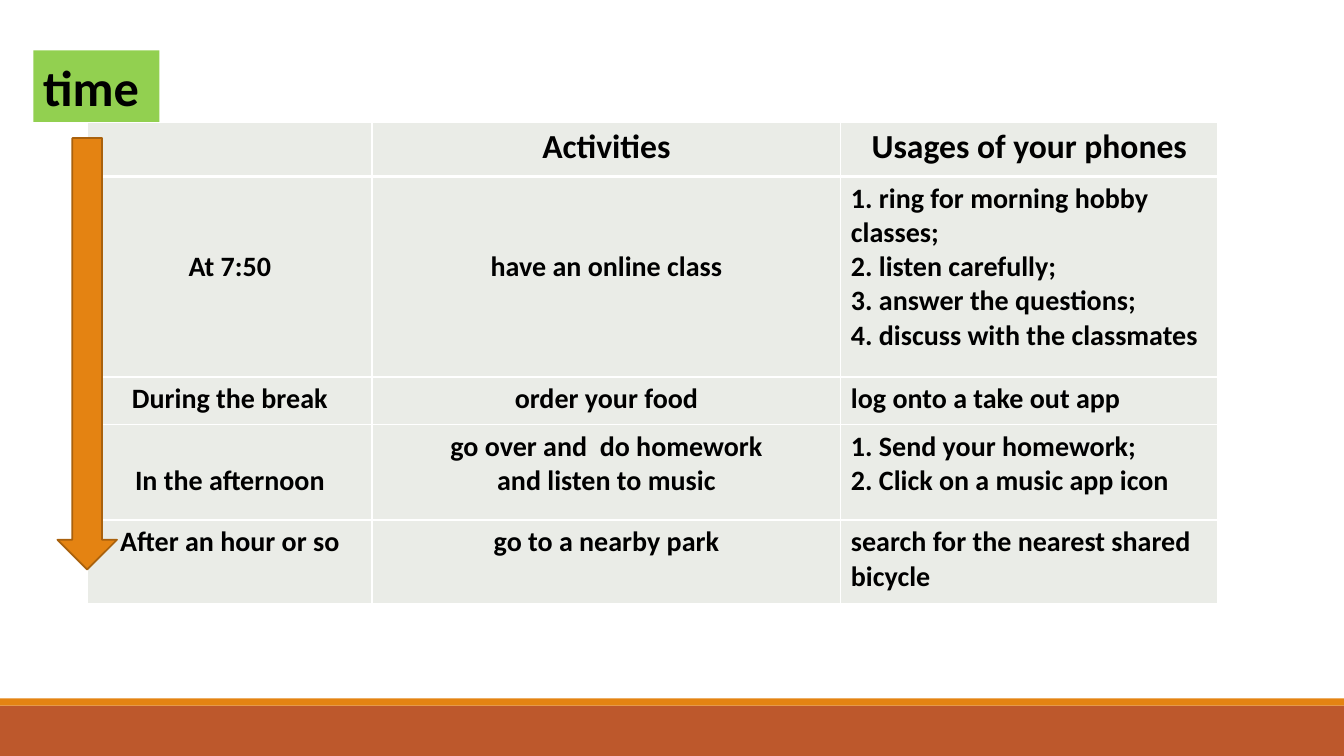
from lxml.etree import SubElement
from pptx import Presentation
from pptx.dml.color import RGBColor
from pptx.enum.shapes import MSO_SHAPE as Preset
from pptx.enum.text import PP_ALIGN as Align
from pptx.oxml.ns import qn
from pptx.util import Inches, Pt

COLORS = {
    "footer": "BD582C",
    "accent": "E48312",
    "arrow_edge": "A9610D",
    "label": "92D050",
    "cell": "EAECE7",
    "grid": "FFFFFF",
    "text": "000000",
}
WIDTH, HEIGHT = 13.33, 7.5
FOOTER_TOP, STRIPE = 7, 0.07
LINE = 0.34
MARGIN = 0.05
COLUMNS = [2.82, 4.65, 3.74]
ROWS = [0.54, 1.99, 0.47, 0.95, 0.83]
SCHEDULE = [
    ["", "Activities", "Usages of your phones"],
    ["At 7:50", "have an online class",
     "1. ring for morning hobby classes;\n2. listen carefully;\n"
     "3. answer the questions;\n4. discuss with the classmates"],
    ["During the break", "order your food", "log onto a take out app"],
    ["In the afternoon", "go over and  do homework\nand listen to music",
     "1. Send your homework;\n2. Click on a music app icon"],
    ["After an hour or so", "go to a nearby park",
     "search for the nearest shared bicycle"],
]
LINES_DOWN = {(1, 0): 2, (1, 1): 2, (3, 0): 1}

deck = Presentation()
deck.slide_width, deck.slide_height = Inches(WIDTH), Inches(HEIGHT)
slide = deck.slides.add_slide(deck.slide_layouts[6])


def add_block(preset, left, top, width, height, color):
    block = slide.shapes.add_shape(
        preset, Inches(left), Inches(top), Inches(width), Inches(height))
    block.shadow.inherit = False
    block.fill.solid()
    block.fill.fore_color.rgb = RGBColor.from_string(COLORS[color])
    block.line.fill.background()
    return block


def style_text(frame, size, align):
    for paragraph in frame.paragraphs:
        paragraph.alignment = align
        for run in paragraph.runs:
            run.font.name = "Calibri"
            run.font.size = Pt(size)
            run.font.bold = True
            run.font.color.rgb = RGBColor.from_string(COLORS["text"])


add_block(Preset.RECTANGLE, 0, FOOTER_TOP, WIDTH, HEIGHT - FOOTER_TOP, "footer")
add_block(Preset.RECTANGLE, 0, FOOTER_TOP - STRIPE, WIDTH, STRIPE, "accent")

schedule = slide.shapes.add_table(
    len(ROWS), len(COLUMNS), Inches(0.87), Inches(1.21),
    Inches(sum(COLUMNS)), Inches(sum(ROWS))).table
for column, width in zip(schedule.columns, COLUMNS):
    column.width = Inches(width)
for row, height in zip(schedule.rows, ROWS):
    row.height = Inches(height)

for r, entries in enumerate(SCHEDULE):
    for c, entry in enumerate(entries):
        cell = schedule.cell(r, c)
        cell.text_frame.text = entry
        centred = r == 0 or c < 2
        style_text(cell.text_frame, 24 if r == 0 else 20,
                   Align.CENTER if centred else Align.LEFT)
        cell.margin_top = Inches(MARGIN + LINE * LINES_DOWN.get((r, c), 0))
        borders = cell._tc.get_or_add_tcPr()
        for side in ("lnL", "lnR", "lnT", "lnB"):
            under_header = (r, side) in [(0, "lnB"), (1, "lnT")]
            border = SubElement(borders, qn(f"a:{side}"),
                                w=str(Pt(3 if under_header else 1)))
            paint = SubElement(border, qn("a:solidFill"))
            SubElement(paint, qn("a:srgbClr"), val=COLORS["grid"])
        cell.fill.solid()
        cell.fill.fore_color.rgb = RGBColor.from_string(COLORS["cell"])

time_arrow = add_block(Preset.DOWN_ARROW, 0.57, 1.37, 0.59, 4.28, "accent")
time_arrow.line.color.rgb = RGBColor.from_string(COLORS["arrow_edge"])
time_arrow.line.width = Pt(1.25)

time_label = add_block(Preset.RECTANGLE, 0.33, 0.5, 1.25, 0.71, "label")
time_label.text_frame.text = "time"
style_text(time_label.text_frame, 36, Align.LEFT)

deck.save("out.pptx")
